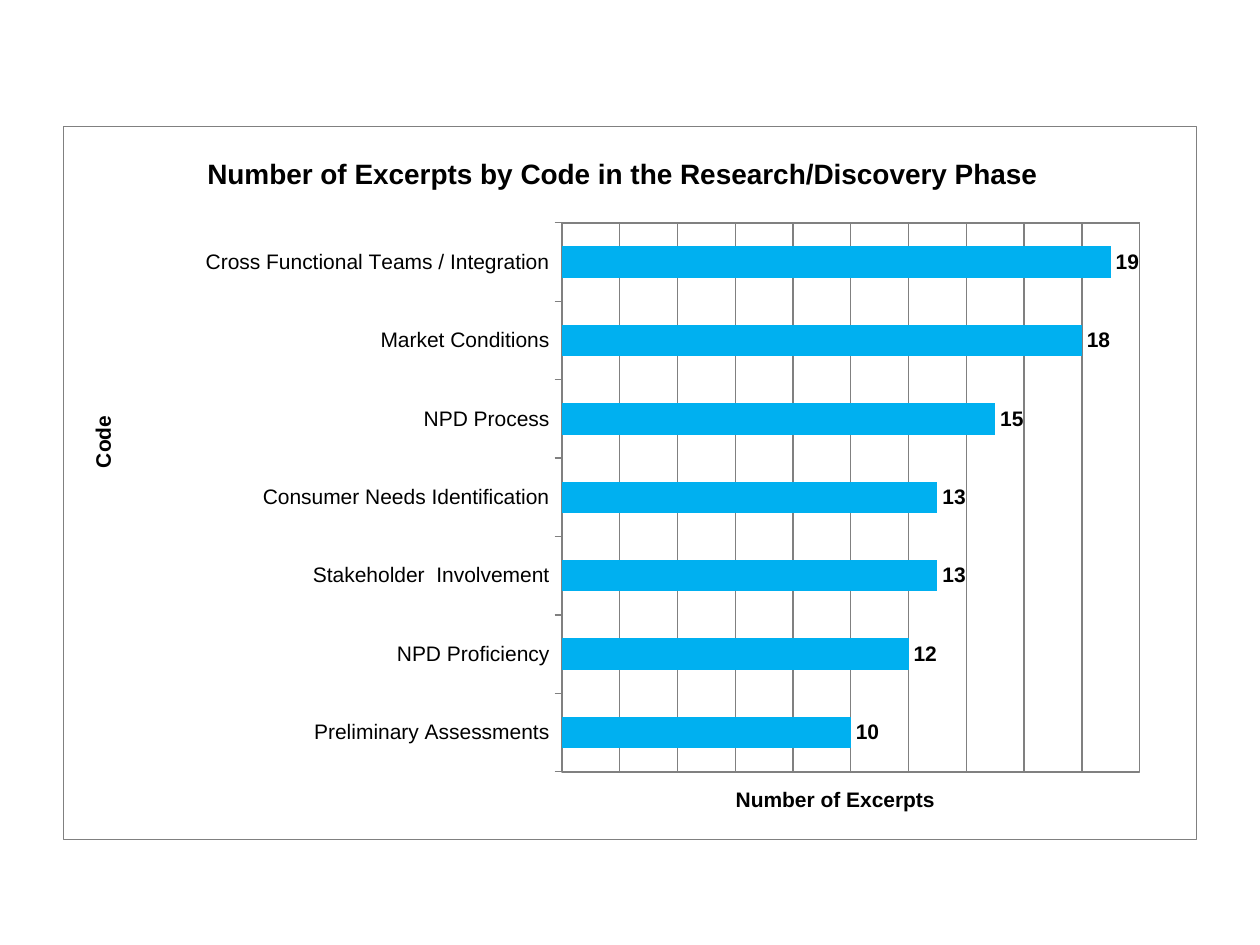
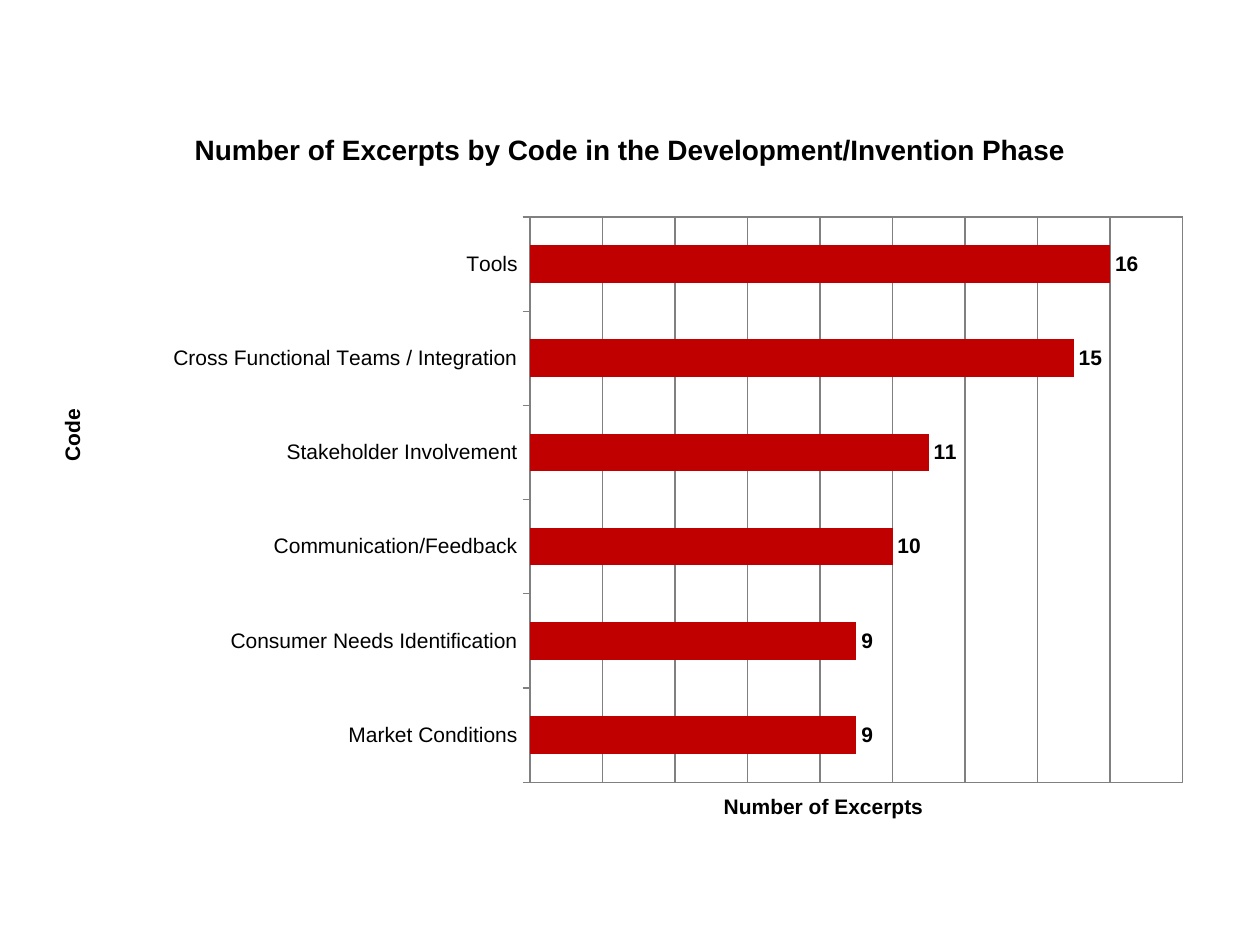
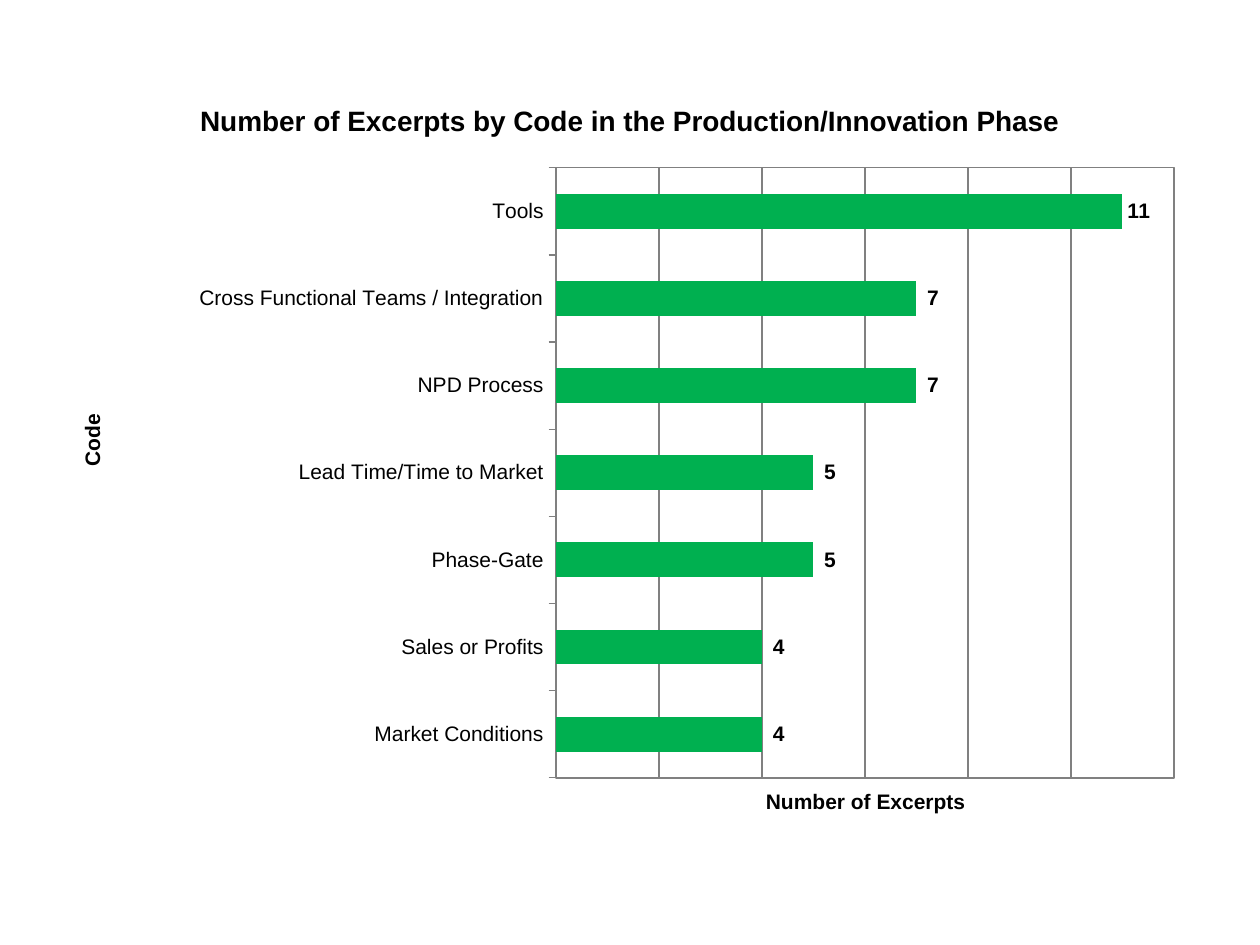
from lxml import etree
from pptx import Presentation
from pptx.chart.data import CategoryChartData
from pptx.dml.color import RGBColor
from pptx.enum.chart import XL_CHART_TYPE, XL_LABEL_POSITION, XL_TICK_LABEL_POSITION, XL_TICK_MARK
from pptx.enum.text import MSO_ANCHOR, PP_ALIGN
from pptx.oxml import parse_xml
from pptx.oxml.ns import nsdecls, qn
from pptx.util import Cm, Pt

BAR = XL_CHART_TYPE.BAR_CLUSTERED
OUTSIDE_END = XL_LABEL_POSITION.OUTSIDE_END
NO_LABELS = XL_TICK_LABEL_POSITION.NONE
TICK_OUT, TICK_NONE = XL_TICK_MARK.OUTSIDE, XL_TICK_MARK.NONE
MIDDLE, CENTER = MSO_ANCHOR.MIDDLE, PP_ALIGN.CENTER

COLORS = {
    "text": "000000",
    "line": "808080",
    "research": "00B0F0",
    "development": "C00000",
    "production": "00B050",
}
FONTS = {
    "title": {"name": "Arial", "size": Pt(16), "bold": True},
    "chart": {"name": "Arial", "size": Pt(10), "bold": False},
    "axis": {"name": "Arial", "size": Pt(12), "bold": False},
    "strong": {"name": "Arial", "size": Pt(12), "bold": True},
}
TITLE_SIZE = (22.86, 3.18)

PHASES = [
    {
        "title": "Number of Excerpts by Code in the Research/Discovery Phase",
        "title_at": (1.12, 1.9),
        "chart_at": (1.27, 2.54, 22.86, 14.4),
        "plot": (0.44, 0.135, 0.51, 0.77),
        "code_at": (0.02, 0.4),
        "count_at": (0.59, 0.92),
        "color": "research",
        "border": True,
        "maximum": 20,
        "format": "General",
        "counts": {
            "Cross Functional Teams / Integration": 19,
            "Market Conditions": 18,
            "NPD Process": 15,
            "Consumer Needs Identification": 13,
            "Stakeholder  Involvement": 13,
            "NPD Proficiency": 12,
            "Preliminary Assessments": 10,
        },
    },
    {
        "title": "Number of Excerpts by Code in the Development/Invention Phase",
        "title_at": (1.27, 1.42),
        "chart_at": (0.64, 2.33, 23.92, 14.61),
        "plot": (0.42, 0.14, 0.55, 0.78),
        "code_at": (0.02, 0.4),
        "count_at": (0.58, 0.93),
        "color": "development",
        "border": False,
        "maximum": 18,
        "format": "General",
        "counts": {
            "Tools": 16,
            "Cross Functional Teams / Integration": 15,
            "Stakeholder Involvement": 11,
            "Communication/Feedback": 10,
            "Consumer Needs Identification": 9,
            "Market Conditions": 9,
        },
    },
    {
        "title": "Number of Excerpts by Code in the Production/Innovation Phase",
        "title_at": (1.27, 0.84),
        "chart_at": (1.06, 1.9, 23.07, 14.82),
        "plot": (0.44, 0.1, 0.54, 0.83),
        "code_at": (0.02, 0.43),
        "count_at": (0.62, 0.94),
        "color": "production",
        "border": False,
        "maximum": 12,
        "format": "[>9]0;_(* #,##0_)",
        "counts": {
            "Tools": 11,
            "Cross Functional Teams / Integration": 7,
            "NPD Process": 7,
            "Lead Time/Time to Market": 5,
            "Phase-Gate": 5,
            "Sales or Profits": 4,
            "Market Conditions": 4,
        },
    },
]


class Deck:
    def __init__(self):
        self.presentation = Presentation()
        self.presentation.slide_width = Cm(25.4)
        self.presentation.slide_height = Cm(19.05)
        self.page = None

    def add_page(self):
        self.page = self.presentation.slides.add_slide(self.presentation.slide_layouts[6])

    def style(self, font, kind):
        for name, value in FONTS[kind].items():
            setattr(font, name, value)
        font.color.rgb = RGBColor.from_string(COLORS["text"])

    def rule(self, line):
        line.color.rgb = RGBColor.from_string(COLORS["line"])
        line.width = Pt(0.75)

    def outline(self, visible):
        fill = f'<a:solidFill><a:srgbClr val="{COLORS["line"]}"/></a:solidFill>' if visible else "<a:noFill/>"
        return parse_xml(
            f'<c:spPr {nsdecls("c", "a")}><a:noFill/><a:ln w="9525">{fill}</a:ln></c:spPr>'
        )

    def place(self, parent, index, values, inner=False):
        for old in parent.findall(qn("c:layout")):
            parent.remove(old)
        layout = parse_xml(f'<c:layout {nsdecls("c")}><c:manualLayout/></c:layout>')
        settings = [("layoutTarget", "inner")] if inner else []
        settings += [("xMode", "edge"), ("yMode", "edge")]
        settings += zip("xywh", values)
        for name, value in settings:
            etree.SubElement(layout[0], qn(f"c:{name}")).set("val", str(value))
        parent.insert(index, layout)

    def title(self, text, position):
        box = self.page.shapes.add_textbox(*map(Cm, position + TITLE_SIZE))
        frame = box.text_frame
        frame.word_wrap = True
        frame.vertical_anchor = MIDDLE
        para = frame.paragraphs[0]
        para.alignment = CENTER
        span = para.add_run()
        span.text = text
        self.style(span.font, "title")

    def axis_title(self, axis, text, position, rotation=0):
        title = axis.axis_title
        frame = title.text_frame
        frame.text = text
        self.style(frame.paragraphs[0].runs[0].font, "strong")
        body = frame._txBody.bodyPr
        body.set("rot", str(rotation * 60000))
        body.set("vert", "horz")
        self.place(title._element, 1, position)

    def bar_chart(self, phase):
        data = CategoryChartData()
        data.categories = list(phase["counts"])
        data.add_series("Series 1", list(phase["counts"].values()))
        frame = self.page.shapes.add_chart(BAR, *map(Cm, phase["chart_at"]), data)
        chart = frame.chart
        chart.has_legend = False
        chart.has_title = False
        self.style(chart.font, "chart")

        space = chart._chartSpace
        space.find(qn("c:chart")).addnext(self.outline(phase["border"]))
        area = space.find(qn("c:chart")).find(qn("c:plotArea"))
        self.place(area, 0, phase["plot"], inner=True)
        area.append(self.outline(True))

        plot = chart.plots[0]
        plot.gap_width = 150
        plot.vary_by_categories = False
        series = plot.series[0]
        series.format.fill.solid()
        series.format.fill.fore_color.rgb = RGBColor.from_string(COLORS[phase["color"]])
        labels = series.data_labels
        label_format = {
            "show_value": True,
            "position": OUTSIDE_END,
            "number_format": phase["format"],
            "number_format_is_linked": False,
        }
        for name, value in label_format.items():
            setattr(labels, name, value)
        self.style(labels.font, "strong")

        codes, counts = chart.category_axis, chart.value_axis
        axis_formats = {
            codes: {"reverse_order": True, "major_tick_mark": TICK_OUT, "has_major_gridlines": False},
            counts: {
                "minimum_scale": 0,
                "maximum_scale": phase["maximum"],
                "major_unit": 2,
                "major_tick_mark": TICK_NONE,
                "tick_label_position": NO_LABELS,
                "has_major_gridlines": True,
            },
        }
        for axis, values in axis_formats.items():
            for name, value in values.items():
                setattr(axis, name, value)
            axis.minor_tick_mark = TICK_NONE
            self.rule(axis.format.line)
        self.rule(counts.major_gridlines.format.line)
        self.style(codes.tick_labels.font, "axis")
        self.axis_title(codes, "Code", phase["code_at"], rotation=-90)
        self.axis_title(counts, "Number of Excerpts", phase["count_at"])


def main():
    deck = Deck()
    for phase in PHASES:
        deck.add_page()
        deck.bar_chart(phase)
        deck.title(phase["title"], phase["title_at"])
    deck.presentation.save("out.pptx")


if __name__ == "__main__":
    main()
